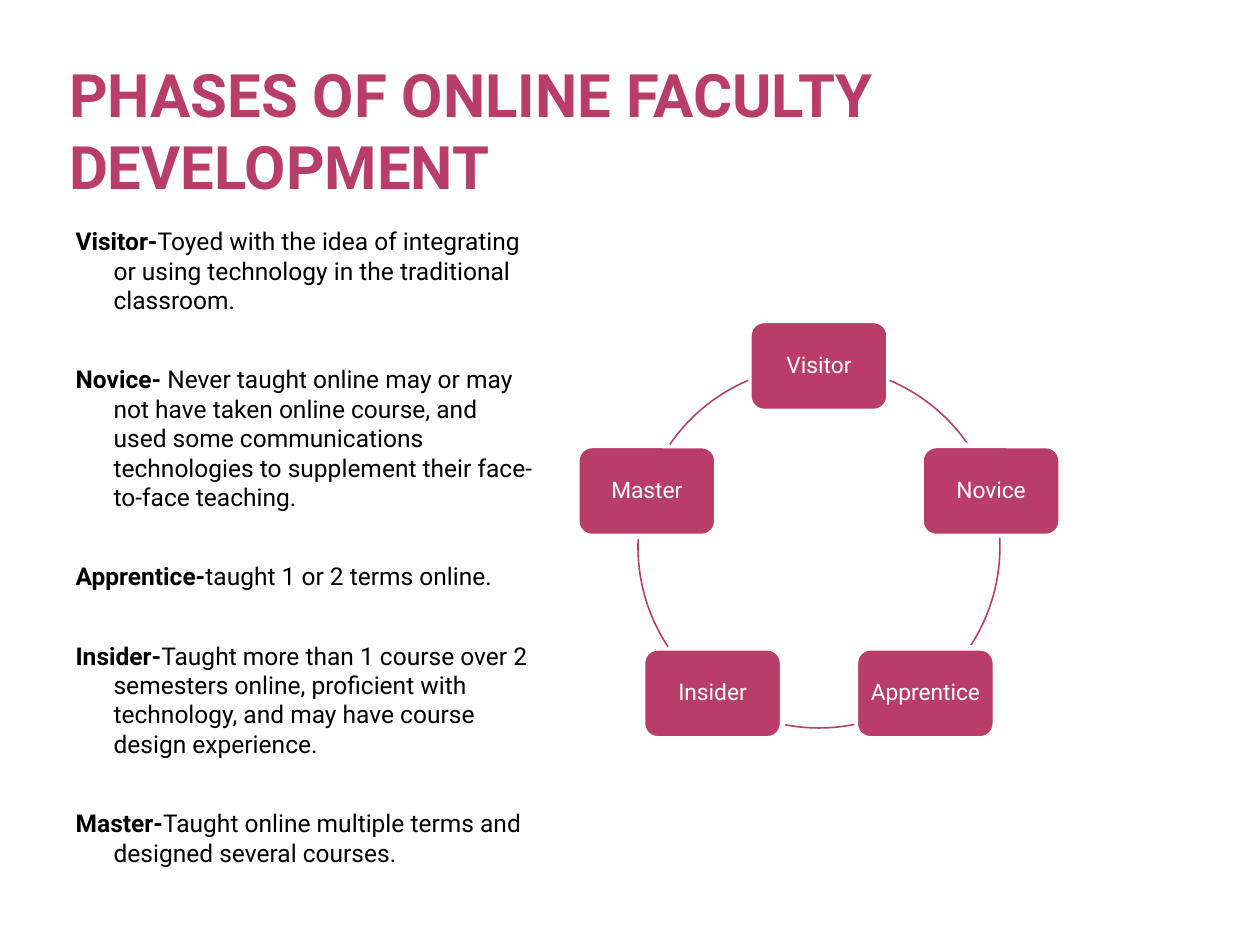
from math import cos, radians, sin

from pptx import Presentation
from pptx.dml.color import RGBColor
from pptx.enum.shapes import MSO_SHAPE
from pptx.enum.text import MSO_ANCHOR, MSO_AUTO_SIZE, PP_ALIGN
from pptx.util import Pt
from lxml.etree import SubElement
from pptx.oxml.ns import qn

SCALE = 914400 / 126  # EMU per px
COLORS = {"accent": "B83D68", "white": "FFFFFF", "black": "000000"}


def px(*lengths):
    return [round(length * SCALE) for length in lengths]


def add_span(para, text, size, color, bold=False):
    span = para.add_run()
    span.text = text
    for name, value in {"name": "Roboto", "size": Pt(size), "bold": bold}.items():
        setattr(span.font, name, value)
    span.font.color.rgb = RGBColor.from_string(COLORS[color])


deck = Presentation()
deck.slide_width, deck.slide_height = px(1260, 945)
page = deck.slides.add_slide(deck.slide_layouts[1])
title, body = page.placeholders

# Title
title.left, title.top, title.width, title.height = px(63, 44, 998, 157)
title_format = {
    "margin_left": px(6)[0], "margin_right": px(6)[0],
    "margin_top": 0, "margin_bottom": 0,
    "vertical_anchor": MSO_ANCHOR.BOTTOM,
    "auto_size": MSO_AUTO_SIZE.NONE, "word_wrap": True,
}
for name, value in title_format.items():
    setattr(title.text_frame, name, value)
para = title.text_frame.paragraphs[0]
para.alignment = PP_ALIGN.LEFT
add_span(para, "PHASES OF ONLINE FACULTY DEVELOPMENT", 34.2, "accent", True)

# Phase descriptions, with a hanging indent
body.left, body.top, body.width, body.height = px(63, 220, 485, 640)
body.text_frame.auto_size = MSO_AUTO_SIZE.NONE
descriptions = [
    ("Visitor-", "Toyed with the idea of integrating or using technology in the "
     "traditional classroom."),
    ("Novice- ", "Never taught online may or may not have taken online course, and "
     "used some communications technologies to supplement their face-to-face teaching."),
    ("Apprentice-", "taught 1 or 2 terms online."),
    ("Insider-", "Taught more than 1 course over 2 semesters online, proficient with "
     "technology, and may have course design experience."),
    ("Master-", "Taught online multiple terms and designed several courses."),
]
indent = px(38)[0]
for index, (phase, description) in enumerate(descriptions):
    para = body.text_frame.paragraphs[0] if index == 0 else body.text_frame.add_paragraph()
    para.space_before = Pt(28.5 if index else 0)
    properties = para._p.get_or_add_pPr()
    properties.set("marL", str(indent))
    properties.set("indent", str(-indent))
    SubElement(properties, qn("a:buNone"))
    add_span(para, phase, 14, "black", True)
    add_span(para, description, 14, "black")

# Cycle: boxes evenly spaced on a circle, joined by arcs
center_x, center_y, radius = 819, 547, 181
box_width, box_height = 140, 91
phases = ["Visitor", "Novice", "Apprentice", "Insider", "Master"]
arc_angles = [(293, 325.5), (357, 33.5), (78.7, 101.3), (146.5, 183), (214.5, 247)]
for index, (phase, angles) in enumerate(zip(phases, arc_angles)):
    angle = radians(72 * index - 90)
    left = center_x + radius * cos(angle) - box_width / 2
    top = center_y + radius * sin(angle) - box_height / 2
    box = page.shapes.add_shape(MSO_SHAPE.ROUNDED_RECTANGLE,
                                *px(left, top, box_width, box_height))
    box.shadow.inherit = False
    box.fill.solid()
    box.fill.fore_color.rgb = RGBColor.from_string(COLORS["accent"])
    box.line.color.rgb = RGBColor.from_string(COLORS["white"])
    box.line.width = Pt(3.15)
    frame = box.text_frame
    for side in ("left", "right", "top", "bottom"):
        setattr(frame, f"margin_{side}", px(6)[0])
    frame.word_wrap = True
    frame.vertical_anchor = MSO_ANCHOR.MIDDLE
    para = frame.paragraphs[0]
    para.alignment = PP_ALIGN.CENTER
    para.line_spacing = 0.9
    add_span(para, phase, 13, "white")

    arc = page.shapes.add_shape(MSO_SHAPE.ARC, *px(center_x - radius, center_y - radius,
                                                   2 * radius, 2 * radius))
    arc.shadow.inherit = False
    arc.fill.background()
    arc.line.color.rgb = RGBColor.from_string(COLORS["accent"])
    arc.line.width = Pt(0.9)
    for end, degrees in enumerate(angles):
        arc.adjustments[end] = degrees * 0.6  # 60000ths of a degree over 100000

deck.save("out.pptx")
